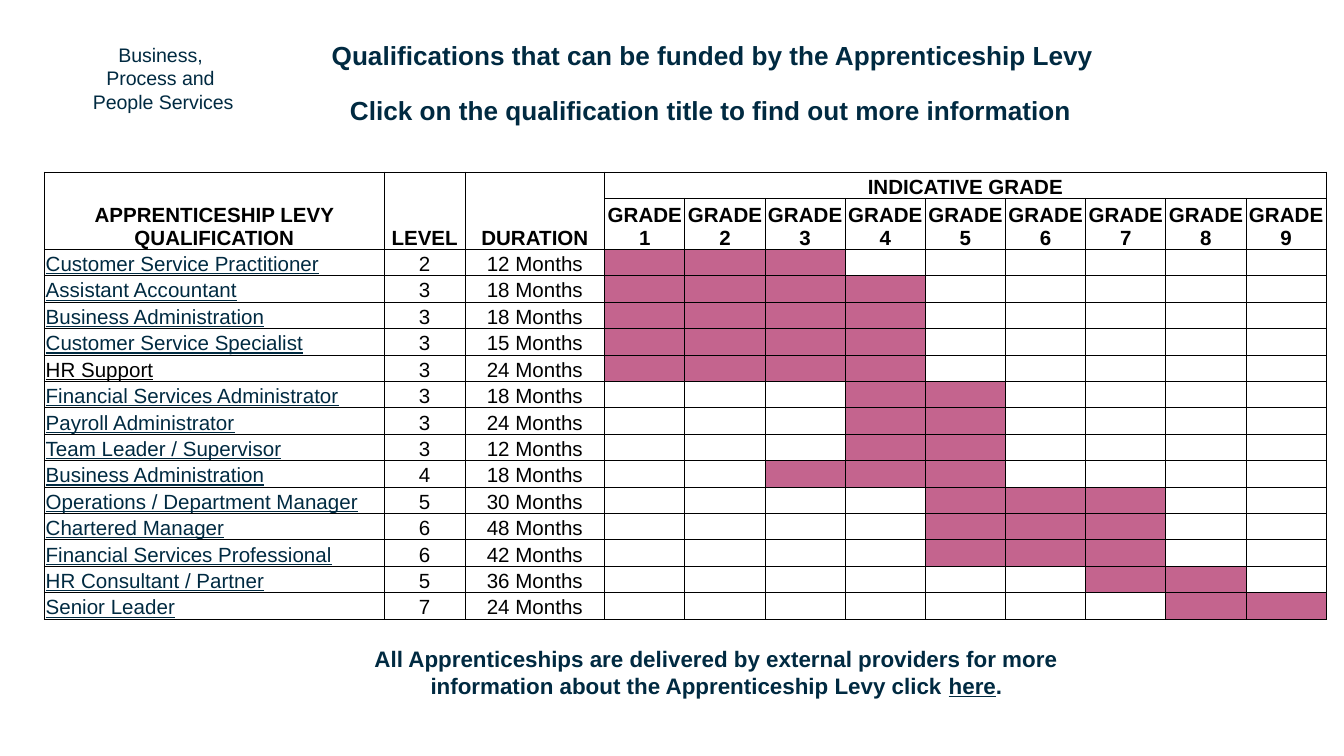
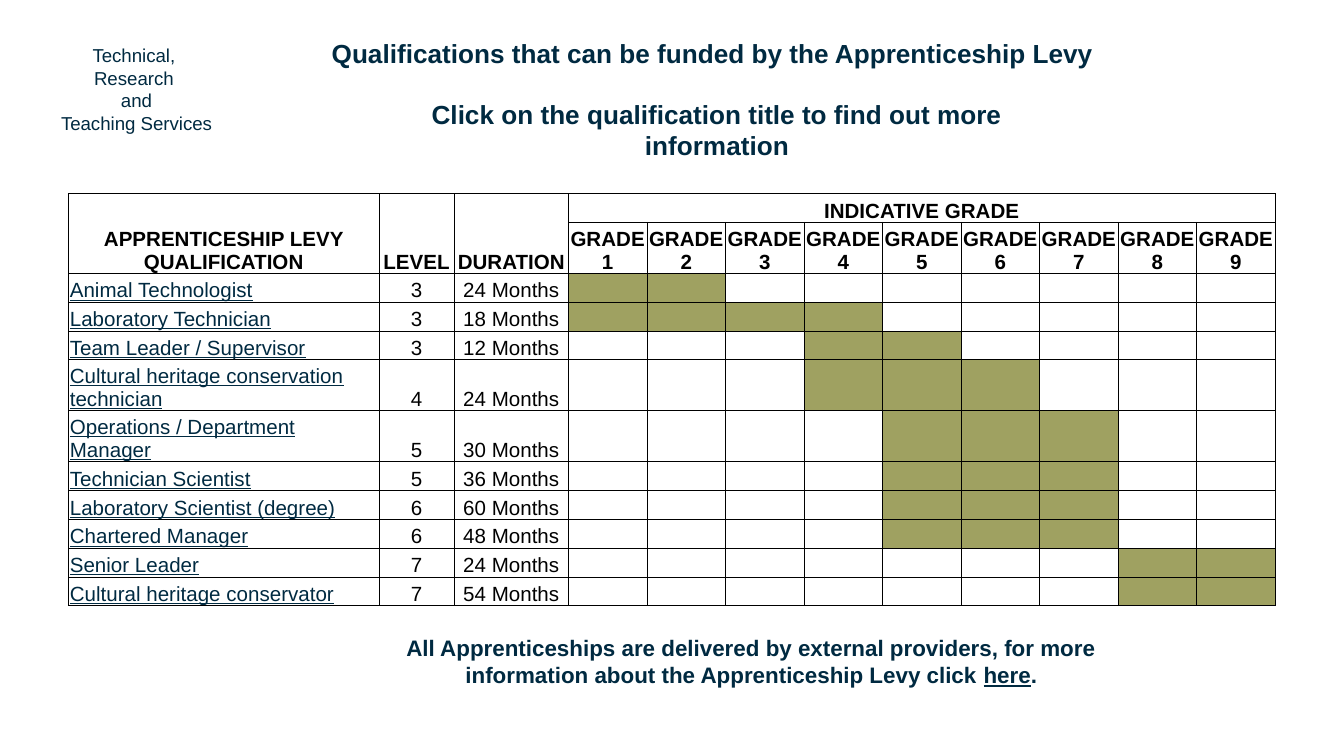
from lxml import etree
from pptx import Presentation
from pptx.dml.color import RGBColor
from pptx.enum.text import MSO_ANCHOR, MSO_AUTO_SIZE, PP_ALIGN
from pptx.oxml.ns import qn
from pptx.util import Inches, Pt

CENTER, LEFT = PP_ALIGN.CENTER, PP_ALIGN.LEFT
TOP, BOTTOM = MSO_ANCHOR.TOP, MSO_ANCHOR.BOTTOM
GROW = MSO_AUTO_SIZE.SHAPE_TO_FIT_TEXT

FONT = "Arial"
COLORS = {"navy": "002A41", "black": "000000", "pink": "C4648E", "olive": "9FA161"}
TITLE = "Qualifications that can be funded by the Apprenticeship Levy "
HINT = "Click on the qualification title to find out more information"
HEADINGS = ["APPRENTICESHIP LEVY QUALIFICATION", "LEVEL", "DURATION"]
GRADES = 9
TALL_ROW = 0.38
CELL_SIZE = 11

# Qualification, level, months, first grade, last grade
BUSINESS = [
    ("Customer Service Practitioner", 2, 12, 1, 3),
    ("Assistant Accountant", 3, 18, 1, 4),
    ("Business Administration", 3, 18, 1, 4),
    ("Customer Service Specialist", 3, 15, 1, 4),
    ("HR Support", 3, 24, 1, 4),
    ("Financial Services Administrator", 3, 18, 4, 5),
    ("Payroll Administrator", 3, 24, 4, 5),
    ("Team Leader / Supervisor", 3, 12, 4, 5),
    ("Business Administration", 4, 18, 3, 5),
    ("Operations / Department Manager", 5, 30, 5, 7),
    ("Chartered Manager", 6, 48, 5, 7),
    ("Financial Services Professional", 6, 42, 5, 7),
    ("HR Consultant / Partner", 5, 36, 7, 8),
    ("Senior Leader", 7, 24, 8, 9),
]
TECHNICAL = [
    ("Animal Technologist", 3, 24, 1, 2),
    ("Laboratory Technician", 3, 18, 1, 4),
    ("Team Leader / Supervisor", 3, 12, 4, 5),
    ("Cultural heritage conservation technician", 4, 24, 4, 6),
    ("Operations / Department Manager", 5, 30, 5, 7),
    ("Technician Scientist", 5, 36, 5, 7),
    ("Laboratory Scientist (degree)", 6, 60, 5, 7),
    ("Chartered Manager", 6, 48, 5, 7),
    ("Senior Leader", 7, 24, 8, 9),
    ("Cultural heritage conservator", 7, 54, 8, 9),
]


def rgb(name):
    return RGBColor.from_string(COLORS[name])


def style(p, size, color="navy", bold=False, underline=False, align=CENTER):
    p.alignment = align
    f = p.font
    f.name, f.size, f.bold, f.underline = FONT, Pt(size), bold, underline
    f.color.rgb = rgb(color)


def add_title(s, box):
    sp = s.shapes.title
    sp.left, sp.top, sp.width, sp.height = map(Inches, box)
    tf = sp.text_frame
    tf.text = TITLE
    tf.word_wrap, tf.auto_size, tf.vertical_anchor = True, GROW, TOP
    style(tf.paragraphs[0], 14, bold=True)


def add_text(s, box, lines, size, bold=False, wrap=True):
    tf = s.shapes.add_textbox(*map(Inches, box)).text_frame
    tf.word_wrap, tf.auto_size = wrap, GROW
    tf.text = "\n".join(lines)
    for p in tf.paragraphs:
        style(p, size, bold=bold)
    return tf


def add_footer(s, box, comma):
    text = (f"All Apprenticeships are delivered by external providers{comma} for more "
            "information about the Apprenticeship Levy click ")
    p = add_text(s, box, [text], 12, bold=True).paragraphs[0]
    for part, underline in (("here", True), (".", False)):
        r = p.add_run()
        r.text = part
        r.font.underline = underline


def set_borders(cell):
    tcPr = cell._tc.get_or_add_tcPr()
    for side in ("a:lnL", "a:lnR", "a:lnT", "a:lnB"):
        ln = etree.SubElement(tcPr, qn(side), w=str(Pt(0.5)))
        fill = etree.SubElement(ln, qn("a:solidFill"))
        etree.SubElement(fill, qn("a:srgbClr"), val=COLORS["black"])


def format_cell(cell):
    cell.margin_left = cell.margin_right = cell.margin_top = Inches(0.01)
    cell.margin_bottom = 0
    cell.vertical_anchor = BOTTOM
    set_borders(cell)
    cell.fill.background()
    # Keeps empty cells from stretching their row
    etree.SubElement(cell.text_frame.paragraphs[0]._p, qn("a:endParaRPr"),
                     sz=str(CELL_SIZE * 100))


def write(cell, text, **look):
    p = cell.text_frame.paragraphs[0]
    p.add_run().text = text
    style(p, CELL_SIZE, **look)


def add_grade_table(s, box, widths, data, color, two_line=()):
    x, y, w, h = box
    n_rows, n_lead = len(data) + 2, len(widths)
    frame = s.shapes.add_table(n_rows, n_lead + GRADES, *map(Inches, box))
    table = frame.table
    table.first_row = table.horz_banding = False

    # Grade columns and single-line rows share the space left over
    grade_w = (w - sum(widths)) / GRADES
    for col, width in zip(table.columns, widths + [grade_w] * GRADES):
        col.width = Inches(width)
    tall = {1} | {i for i, row in enumerate(data, 2) if row[0] in two_line}
    row_h = (h - TALL_ROW * len(tall)) / (n_rows - len(tall))
    for i, row in enumerate(table.rows):
        row.height = Inches(TALL_ROW if i in tall else row_h)
    for cell in table.iter_cells():
        format_cell(cell)

    # Header
    header = {"color": "black", "bold": True}
    for c, text in enumerate(HEADINGS):
        table.cell(0, c).merge(table.cell(1, c))
        write(table.cell(0, c), text, **header)
    table.cell(0, n_lead).merge(table.cell(0, n_lead + GRADES - 1))
    write(table.cell(0, n_lead), "INDICATIVE GRADE", **header)
    for g in range(GRADES):
        write(table.cell(1, n_lead + g), f"GRADE {g + 1}", **header)

    # Qualifications with their grade range
    for i, (name, level, months, first, last) in enumerate(data, 2):
        name_color = "black" if name == "HR Support" else "navy"
        write(table.cell(i, 0), name, color=name_color, underline=True, align=LEFT)
        write(table.cell(i, 1), str(level), color="black")
        write(table.cell(i, 2), f"{months} Months", color="black")
        for g in range(first, last + 1):
            fill = table.cell(i, n_lead + g - 1).fill
            fill.solid()
            fill.fore_color.rgb = rgb(color)


def new_slide(prs, title_top):
    s = prs.slides.add_slide(prs.slide_layouts[5])
    add_title(s, (0.33, title_top, 10, 0.34))
    return s


def business_slide(prs):
    s = new_slide(prs, 0.24)
    add_text(s, (2.25, 0.65, 6.08, 0.34), [HINT], 14, bold=True)
    add_footer(s, (2.47, 4.75, 5.72, 0.71), comma="")
    add_grade_table(s, (0.33, 1.28, 9.54, 3.33), [2.53, 0.6, 1.04], BUSINESS, "pink")
    add_text(s, (0.58, 0.27, 1.27, 0.63),
             ["Business, ", "Process and ", "People Services"], 10.5, wrap=False)


def technical_slide(prs):
    s = new_slide(prs, 0.23)
    add_text(s, (0.34, 0.28, 1.35, 0.77),
             ["Technical, ", "Research ", "and", "Teaching Services"], 10, wrap=False)
    add_grade_table(s, (0.51, 1.44, 8.98, 3.07), [2.31, 0.56, 0.85], TECHNICAL, "olive",
                    two_line=("Cultural heritage conservation technician",
                              "Operations / Department Manager"))
    add_text(s, (2.57, 0.68, 5.53, 0.57), [HINT], 14, bold=True)
    add_footer(s, (2.73, 4.67, 5.72, 0.71), comma=",")


def main():
    prs = Presentation()
    prs.slide_width = Inches(10)
    prs.slide_height = prs.slide_width * 9 // 16
    business_slide(prs)
    technical_slide(prs)
    prs.save("out.pptx")


if __name__ == "__main__":
    main()
